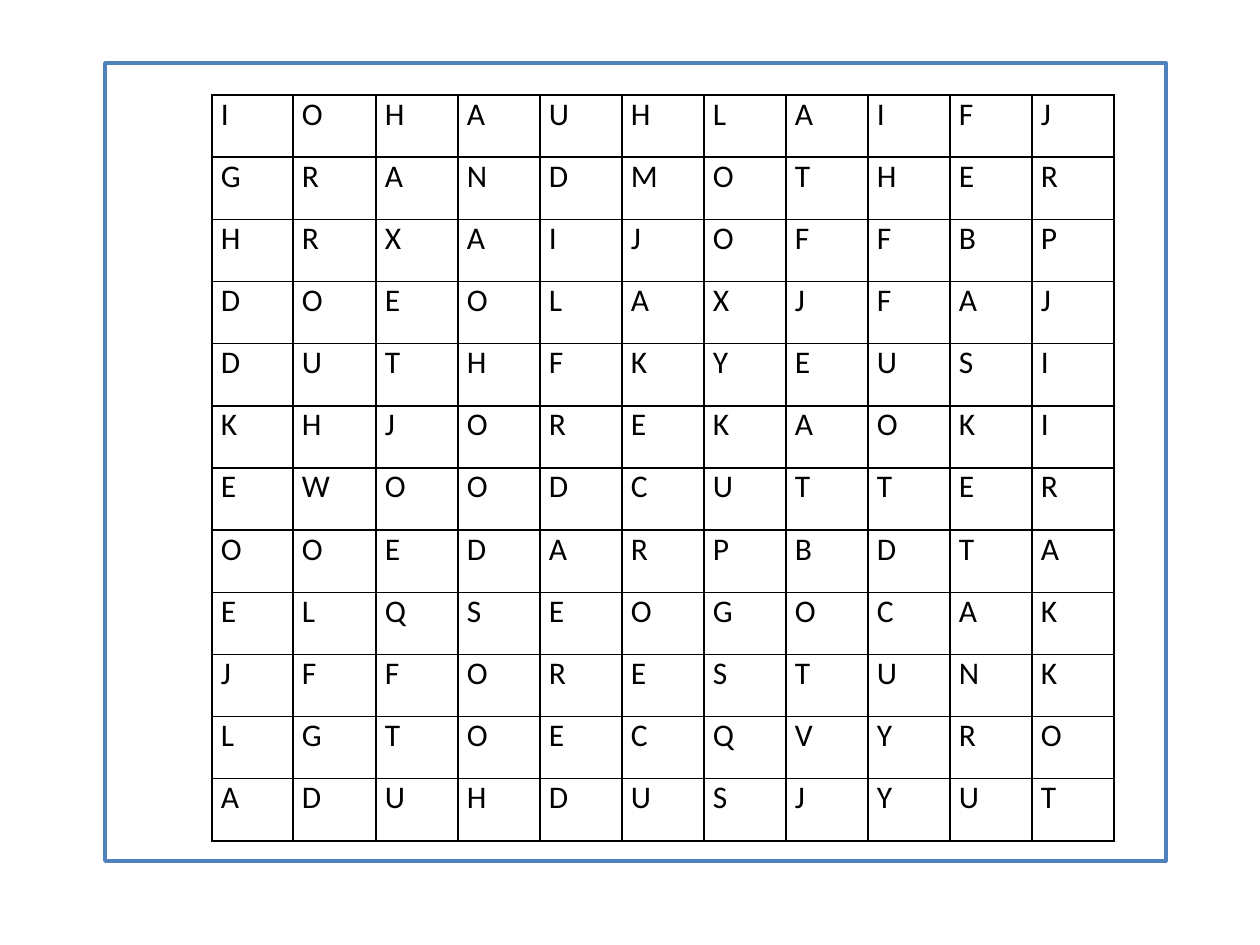
"""Build a word-search slide: a framed grid of letters."""
from dataclasses import dataclass

from lxml import etree
from pptx import Presentation
from pptx import util as u
from pptx.dml.color import RGBColor
from pptx.enum import shapes
from pptx.oxml.ns import qn

PX = u.Inches(1) / 126


@dataclass(frozen=True)
class Theme:
    paper: str = "FFFFFF"
    frame: str = "4F81BD"
    ink: str = "000000"
    font: str = "Calibri"
    letter_pt: int = 18
    frame_pt: int = 2
    rule_pt: int = 1


@dataclass(frozen=True)
class Box:
    left: int
    top: int
    width: int
    height: int

    def emu(self) -> tuple[int, ...]:
        return tuple(px(v) for v in (self.left, self.top, self.width, self.height))


THEME = Theme()
FRAME = Box(105, 63, 1061, 798)
GRID = Box(212, 95, 902, 746)
COLUMN_WIDTHS = [81, 83] + [82] * 9
CELL_INSET = 9
LETTER_ROWS = [
    "IOHAUHLAIFJ",
    "GRANDMOTHER",
    "HRXAIJOFFBP",
    "DOEOLAXJFAJ",
    "DUTHFKYEUSI",
    "KHJOREKAOKI",
    "EWOODCUTTER",
    "OOEDARPBDTA",
    "ELQSEOGOCAK",
    "JFFORESTUNK",
    "LGTOECQVYRO",
    "ADUHDUSJYUT",
]


def px(length: float) -> int:
    return round(length * PX)


def rgb(colour: str) -> RGBColor:
    return RGBColor.from_string(colour)


def draw_frame(slide, box: Box) -> None:
    frame = slide.shapes.add_shape(shapes.MSO_SHAPE.RECTANGLE, *box.emu())
    frame.shadow.inherit = False
    frame.fill.solid()
    frame.fill.fore_color.rgb = rgb(THEME.paper)
    frame.line.color.rgb = rgb(THEME.frame)
    frame.line.width = u.Pt(THEME.frame_pt)


def rule_cell(cell) -> None:
    properties = cell._tc.get_or_add_tcPr()
    for side in ("lnL", "lnR", "lnT", "lnB"):
        rule = etree.SubElement(properties, qn(f"a:{side}"), w=str(u.Pt(THEME.rule_pt)))
        fill = etree.SubElement(rule, qn("a:solidFill"))
        etree.SubElement(fill, qn("a:srgbClr"), val=THEME.ink)


def write_letter(cell, letter: str) -> None:
    cell.margin_left = cell.margin_right = px(CELL_INSET)
    cell.margin_top = cell.margin_bottom = 0
    rule_cell(cell)
    cell.fill.background()
    cell.text = letter
    font = cell.text_frame.paragraphs[0].font
    font.name = THEME.font
    font.size = u.Pt(THEME.letter_pt)
    font.bold = False
    font.color.rgb = rgb(THEME.ink)


def draw_letter_grid(slide, box: Box, letter_rows: list[str]) -> None:
    grid = slide.shapes.add_table(len(letter_rows), len(COLUMN_WIDTHS), *box.emu()).table
    grid.first_row = grid.horz_banding = False
    for column, width in zip(grid.columns, COLUMN_WIDTHS):
        column.width = px(width)
    for row, letters in zip(grid.rows, letter_rows):
        row.height = px(box.height / len(letter_rows))
        for cell, letter in zip(row.cells, letters):
            write_letter(cell, letter)


def main() -> None:
    deck = Presentation()
    deck.slide_width, deck.slide_height = px(1260), px(945)
    slide = deck.slides.add_slide(deck.slide_layouts[6])
    draw_frame(slide, FRAME)
    draw_letter_grid(slide, GRID, LETTER_ROWS)
    deck.save("out.pptx")


if __name__ == "__main__":
    main()
